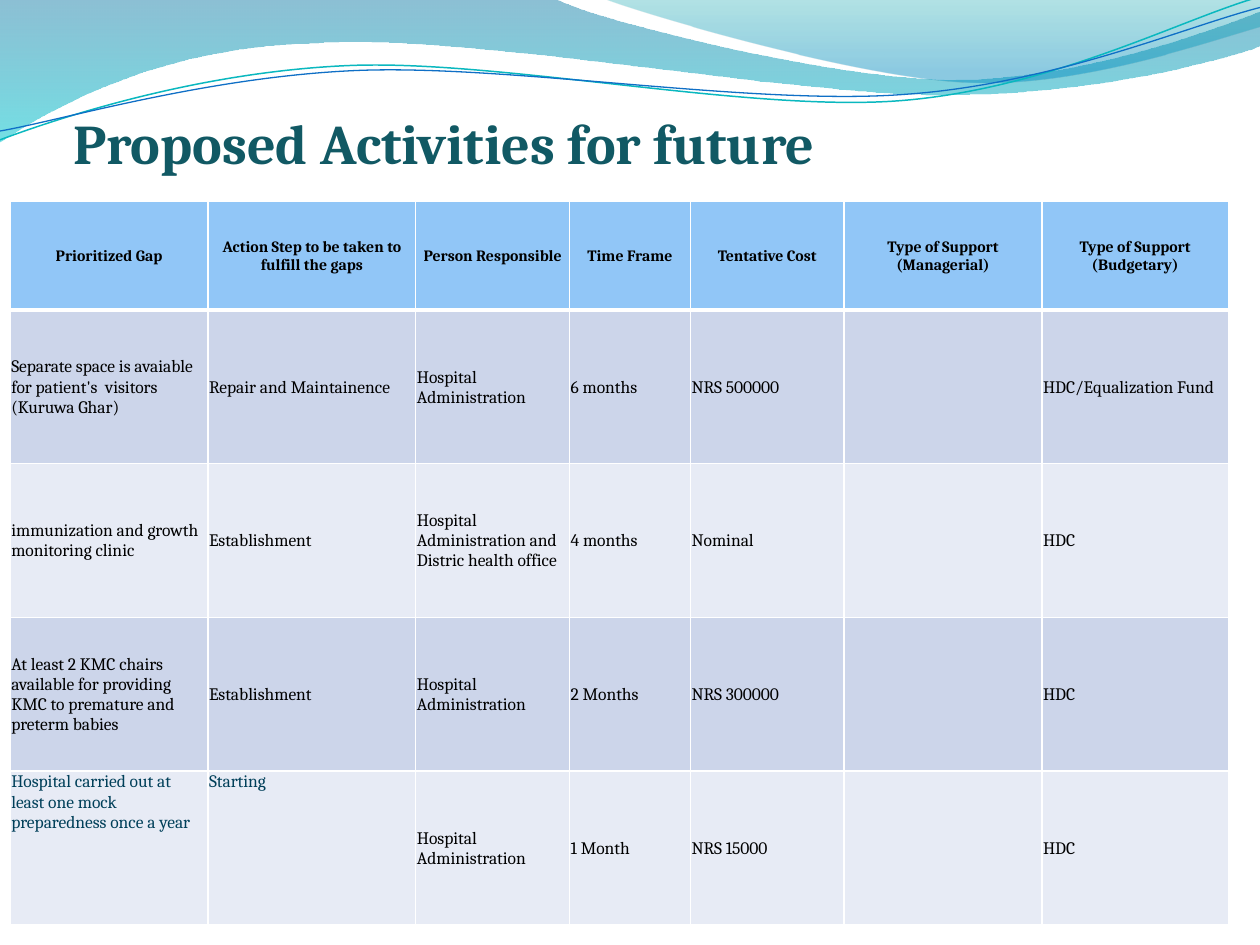
"""Build the slide of proposed future activities."""
from math import cos, radians, sin
from lxml.etree import SubElement
from pptx import Presentation
from pptx.dml.color import RGBColor as RGB
from pptx.enum.text import MSO_ANCHOR as Anchor, PP_ALIGN as Align
from pptx.oxml.ns import qn
from pptx.util import Inches, Pt

WHITE = RGB(0xFF, 0xFF, 0xFF)
BLACK = RGB(0, 0, 0)
TEAL = RGB(0x11, 0x59, 0x64)
NAVY = RGB(0x00, 0x3F, 0x59)
HEAD = RGB(0x91, 0xC6, 0xF7)
BANDS = RGB(0xCC, 0xD5, 0xEA), RGB(0xE7, 0xEB, 0xF5)

TITLE = "Proposed Activities for future"
ROWS = [
    ("Prioritized Gap", "Action Step to be taken to fulfill the gaps",
     "Person Responsible", "Time Frame", "Tentative Cost",
     "Type of Support (Managerial)", "Type of Support (Budgetary)"),
    ("Separate space is avaiable for patient's  visitors (Kuruwa Ghar)",
     "Repair and Maintainence", "Hospital Administration", "6 months",
     "NRS 500000", "", "HDC/Equalization Fund"),
    ("immunization and growth monitoring clinic", "Establishment",
     "Hospital Administration and Distric health office", "4 months",
     "Nominal", "", "HDC"),
    ("At least 2 KMC chairs available for providing KMC to premature and "
     "preterm babies", "Establishment", "Hospital Administration",
     "2 Months", "NRS 300000", "", "HDC"),
    ("Hospital carried out at least one mock preparedness once a year",
     "Starting", "Hospital Administration", "1 Month", "NRS 15000", "", "HDC"),
]
WIDTHS = 1.57, 1.65, 1.22, 0.96, 1.22, 1.57, 1.48
HEIGHTS = 0.86, 1.22, 1.22, 1.22, 1.22

WAVES = [
    ([(0, 0), (4.4, -0.01), (4.76, 0.17, 6.64, 0.63, 7.58, 0.63),
      (8.53, 0.63, 9.58, 0.26, 10, 0.09), (10.01, 0.36),
      (9.83, 0.44, 8.7, 0.76, 7.46, 0.75), (6.22, 0.75, 3.82, 0.28, 2.57, 0.34),
      (1.29, 0.36, 0.46, 0.83, -0.01, 1.13), (0, 0)],
     [(0, RGB(0x00, 0x74, 0xA1), 45), (1, RGB(0x00, 0xC6, 0xCF), 55)]),
    ([(4.79, -0.01), (5.09, 0.11, 6.82, 0.62, 7.69, 0.65),
      (8.56, 0.69, 9.61, 0.32, 10, 0.21), (10, 0), (4.79, -0.01)],
     [(0, RGB(0x00, 0xA1, 0xA9), 30), (0.8, RGB(0x00, 0x8B, 0xBF), 45)]),
]
TILT = 357.3
LINES = [
    ([(0, 1.11), (0.48, 0.93, 1.58, 0.57, 2.77, 0.52),
      (3.95, 0.47, 5.93, 0.89, 7.13, 0.8), (8.33, 0.71, 9.38, 0.15, 9.98, -0.02)],
     (4.99, 0.58), RGB(0x0A, 0xB8, 0xBF), 0.85),
    ([(0, 1.04), (0.47, 0.96, 1.64, 0.61, 2.83, 0.56),
      (4.03, 0.51, 5.97, 0.84, 7.17, 0.75), (8.36, 0.67, 9.41, 0.21, 10, 0.06)],
     (5, 0.59), RGB(0x0F, 0x6F, 0xC6), 0.75),
]


def apply(item, look):
    for key, value in look.items():
        setattr(item, key, value)


def write(para, text, size, color, bold):
    run = para.add_run()
    run.text = text
    apply(run.font, {"name": "Cambria", "size": Pt(size), "bold": bold})
    run.font.color.rgb = color


def pairs(seg):
    return list(zip(seg[::2], seg[1::2]))


def level(segs, hub):
    turn = radians(360 - TILT)
    flat = []
    for seg in segs:
        spots = [(x - hub[0], y - hub[1]) for x, y in pairs(seg)]
        flat.append([value for x, y in spots for value in
                     (hub[0] + x * cos(turn) - y * sin(turn),
                      hub[1] + x * sin(turn) + y * cos(turn))])
    return flat


def draw(slide, segs, close):
    points = [(Inches(x), Inches(y)) for seg in segs for x, y in pairs(seg)]
    pen = slide.shapes.build_freeform(*points[0])
    pen.add_line_segments(points[1:], close=close)
    shape = pen.convert_to_shape()
    shape.shadow.inherit = False
    route = next(shape.element.iter(qn("a:path")))
    steps = iter(route.findall(qn("a:lnTo")))
    for seg in segs[1:]:
        group = [next(steps) for _ in pairs(seg)]
        if len(group) == 3:
            curve = route.makeelement(qn("a:cubicBezTo"))
            group[0].addprevious(curve)
            for step in group:
                curve.append(step[0])
                route.remove(step)
    return shape


def add_wave(slide, segs, stops):
    shape = draw(slide, segs, True)
    shape.line.fill.background()
    shape.fill.gradient()
    shape.fill.gradient_angle = 270
    for stop, (place, color, _) in zip(shape.fill.gradient_stops, stops):
        stop.position = place
        stop.color.rgb = color
    for node, (_, _, alpha) in zip(shape.element.iter(qn("a:srgbClr")), stops):
        SubElement(node, qn("a:alpha"), val=str(alpha * 1000))


def add_line(slide, segs, hub, color, width):
    shape = draw(slide, level(segs, hub), False)
    shape.rotation = TILT
    shape.fill.background()
    shape.line.color.rgb = color
    shape.line.width = Pt(width)


def add_title(slide):
    box = slide.shapes.add_textbox(*map(Inches, (0.58, 0.83, 8.5, 1.75)))
    frame = box.text_frame
    apply(frame, {"word_wrap": True, "vertical_anchor": Anchor.TOP,
                  "margin_left": 0, "margin_right": 0,
                  "margin_top": Inches(0.03), "margin_bottom": 0})
    write(frame.paragraphs[0], TITLE, 32, TEAL, True)


def edge(cell, head):
    props = cell._tc.get_or_add_tcPr()
    for side in "LRTB":
        width = Pt(3 if head and side == "B" else 1)
        line = SubElement(props, qn("a:ln" + side), w=str(width))
        fill = SubElement(line, qn("a:solidFill"))
        SubElement(fill, qn("a:srgbClr"), val=str(WHITE))


def add_grid(slide):
    place = 0.08, 1.6, sum(WIDTHS), sum(HEIGHTS)
    table = slide.shapes.add_table(len(ROWS), len(WIDTHS),
                                   *map(Inches, place)).table
    for col, width in zip(table.columns, WIDTHS):
        col.width = Inches(width)
    gap = Inches(0.01)
    for r, texts in enumerate(ROWS):
        table.rows[r].height = Inches(HEIGHTS[r])
        head = r == 0
        for c, text in enumerate(texts):
            cell = table.cell(r, c)
            late = r == len(ROWS) - 1 and c < 2
            apply(cell, {"margin_left": gap, "margin_right": gap,
                         "margin_top": gap, "margin_bottom": 0,
                         "vertical_anchor": Anchor.TOP if late else Anchor.MIDDLE})
            edge(cell, head)
            cell.fill.solid()
            cell.fill.fore_color.rgb = HEAD if head else BANDS[(r - 1) % 2]
            if text:
                para = cell.text_frame.paragraphs[0]
                para.alignment = Align.CENTER if head else Align.LEFT
                write(para, text, 9 if head else 10, NAVY if late else BLACK, head)


def main():
    deck = Presentation()
    apply(deck, {"slide_width": Inches(10), "slide_height": Inches(7.5)})
    slide = deck.slides.add_slide(deck.slide_layouts[6])
    for wave in WAVES:
        add_wave(slide, *wave)
    for line in LINES:
        add_line(slide, *line)
    add_title(slide)
    add_grid(slide)
    deck.save("out.pptx")


if __name__ == "__main__":
    main()
